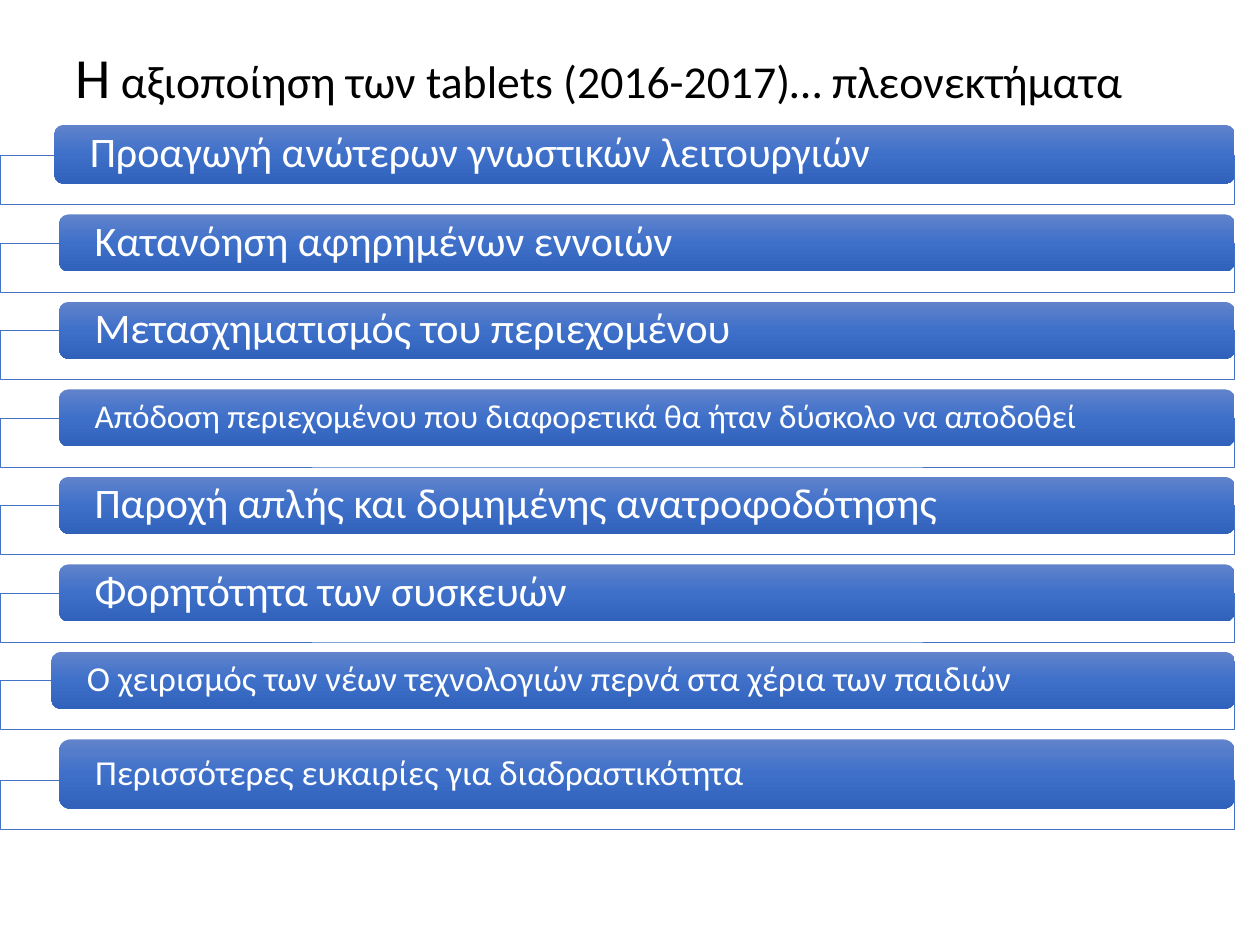
from copy import deepcopy
from dataclasses import dataclass
from lxml.etree import SubElement
from pptx import Presentation
from pptx.dml.color import RGBColor as RGB
from pptx.enum.shapes import MSO_SHAPE as Shape
from pptx.enum.text import MSO_ANCHOR as Anchor, PP_ALIGN as Align
from pptx.oxml.ns import qn
from pptx.util import Pt


@dataclass(frozen=True)
class Theme:
    font: str = "Calibri"
    ink: str = "000000"
    paper: str = "FFFFFF"
    edge: str = "4472C4"
    shades: tuple = ("6183CB", "3E70CA", "3062BB")
    cap: float = 32.4
    head: float = 26.1
    large: float = 24
    mid: float = 20
    small: float = 19


T = Theme()
RIGHT = 705.6
TOP = 71.3
FRAME = 28
LAP = 16.2
GAP = 5.6
LEFT = 33.8
HIGH = 32.6

ITEMS = [
    ("Προαγωγή ανώτερων γνωστικών λειτουργιών", T.large, 31, 33.8),
    ("Κατανόηση αφηρημένων εννοιών", T.large, LEFT, HIGH),
    ("Μετασχηματισμός του περιεχομένου", T.large, LEFT, HIGH),
    ("Απόδοση περιεχομένου που διαφορετικά θα ήταν δύσκολο να αποδοθεί",
     T.small, LEFT, HIGH),
    ("Παροχή απλής και δομημένης ανατροφοδότησης", T.large, LEFT, HIGH),
    ("Φορητότητα των συσκευών", T.large, LEFT, HIGH),
    ("Ο χειρισμός των νέων τεχνολογιών περνά στα χέρια των παιδιών",
     T.mid, 29.4, HIGH),
    ("Περισσότερες ευκαιρίες για διαδραστικότητα", T.mid, LEFT, 39.6),
]


def assign(obj, values):
    for name, value in values.items():
        setattr(obj, name, value)


def write(shape, runs, color, inset):
    frame = shape.text_frame
    assign(frame, {
        "word_wrap": True, "vertical_anchor": Anchor.MIDDLE,
        "margin_left": Pt(inset), "margin_right": Pt(inset),
        "margin_top": 0, "margin_bottom": 0,
    })
    para = frame.paragraphs[0]
    assign(para, {"alignment": Align.LEFT, "line_spacing": 0.9})
    for text, size in runs:
        run = para.add_run()
        run.text = text
        assign(run.font, {"name": T.font, "size": Pt(size)})
        run.font.color.rgb = RGB.from_string(color)


def add_box(slide, kind, *area):
    box = slide.shapes.add_shape(kind, *map(Pt, area))
    box.shadow.inherit = False
    return box


def add_frame(slide, top):
    box = add_box(slide, Shape.RECTANGLE, 0, top, RIGHT, FRAME)
    box.fill.solid()
    box.fill.fore_color.rgb = RGB.from_string(T.paper)
    tint = box.fill._xPr.find(qn("a:solidFill"))[0]
    SubElement(tint, qn("a:alpha")).set("val", "90000")
    box.line.color.rgb = RGB.from_string(T.edge)
    box.line.width = Pt(0.5)


def shade(fill):
    fill.gradient()
    fill.gradient_angle = 270
    stops = fill._xPr.find(qn("a:gradFill")).find(qn("a:gsLst"))
    stops.insert(1, deepcopy(stops[0]))
    for stop, color, place in zip(fill.gradient_stops, T.shades, (0, 0.5, 1)):
        stop.color.rgb = RGB.from_string(color)
        stop.position = place


def add_bar(slide, text, size, left, top, high):
    bar = add_box(slide, Shape.ROUNDED_RECTANGLE,
                  left, top, RIGHT - left, high)
    shade(bar.fill)
    bar.line.fill.background()
    write(bar, [(text, size)], T.paper, 18.7)


def add_title(slide):
    box = slide.shapes.add_textbox(Pt(36), Pt(26), Pt(648), Pt(39.6))
    runs = [("Η", T.cap),
            (" αξιοποίηση των tablets (2016-2017)… πλεονεκτήματα", T.head)]
    write(box, runs, T.ink, 7.2)


def main():
    deck = Presentation()
    assign(deck, {"slide_width": Pt(720), "slide_height": Pt(540)})
    slide = deck.slides.add_slide(deck.slide_layouts[6])
    add_title(slide)
    top = TOP
    for text, size, left, high in ITEMS:
        base = top + high - LAP
        add_frame(slide, base)
        add_bar(slide, text, size, left, top, high)
        top = base + FRAME + GAP
    deck.save("out.pptx")


if __name__ == "__main__":
    main()
